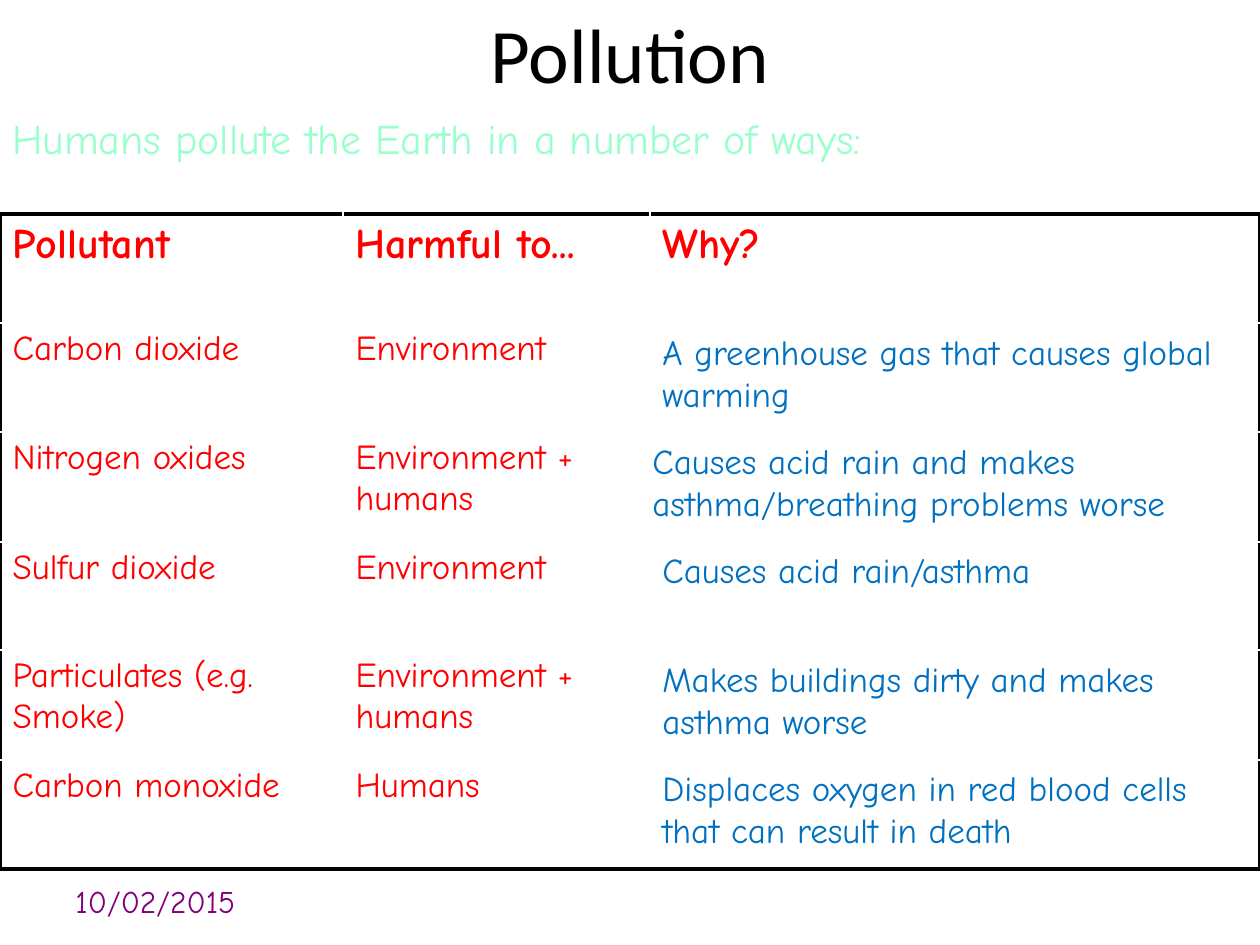
from lxml import etree
from pptx import Presentation
from pptx.dml.color import RGBColor
from pptx.enum.text import MSO_ANCHOR, MSO_AUTO_SIZE, PP_ALIGN
from pptx.oxml.ns import qn
from pptx.util import Emu, Pt

MIDDLE, TOP = MSO_ANCHOR.MIDDLE, MSO_ANCHOR.TOP
LEFT, CENTER = PP_ALIGN.LEFT, PP_ALIGN.CENTER
GROW, FIXED = MSO_AUTO_SIZE.SHAPE_TO_FIT_TEXT, MSO_AUTO_SIZE.NONE
SCALE = 914400 / 126
COMIC = "Comic Neue"

TITLE = {"name": "Calibri", "size": Pt(44)}
INTRO = {"name": COMIC, "size": Pt(24)}
HEAD = {"name": COMIC, "size": Pt(24), "bold": True}
BODY = {"name": COMIC, "size": Pt(20), "bold": False}
DATE = {"name": COMIC, "size": Pt(18)}

COLS = [343, 307, 610]
ROWS = [109, 109, 110, 108, 110, 109]
CELLS = [
    ["Pollutant", "Harmful to...", "Why?"],
    ["Carbon dioxide", "Environment", ""],
    ["Nitrogen oxides", "Environment + humans", ""],
    ["Sulfur dioxide", "Environment", ""],
    ["Particulates (e.g. Smoke)", "Environment + humans", ""],
    ["Carbon monoxide", "Humans", ""],
]
REASONS = [
    (650, 324, 97, "A greenhouse gas that causes global warming"),
    (640, 433, 97, "Causes acid rain and makes asthma/breathing problems worse"),
    (650, 542, 54, "Causes acid rain/asthma"),
    (650, 651, 97, "Makes buildings dirty and makes asthma worse"),
    (650, 760, 97, "Displaces oxygen in red blood cells that can result in death"),
]


def px(n):
    return Emu(round(n * SCALE))


def color(code):
    return RGBColor.from_string(code)


def write(frame, text, style, ink, align=LEFT):
    para = frame.paragraphs[0]
    para.alignment = align
    run = para.add_run()
    run.text = text
    for key, value in style.items():
        setattr(run.font, key, value)
    run.font.color.rgb = color(ink)


def add_text(slide, box, text, style, ink, align=LEFT, anchor=TOP, fit=GROW):
    frame = slide.shapes.add_textbox(*map(px, box)).text_frame
    traits = {"word_wrap": True, "auto_size": fit, "vertical_anchor": anchor}
    for key, value in traits.items():
        setattr(frame, key, value)
    write(frame, text, style, ink, align)


def add_edge(cell, side, outer):
    width, ink = (Pt(2.25), "000000") if outer else (Pt(1), "FFFFFF")
    props = cell._tc.get_or_add_tcPr()
    line = etree.SubElement(props, qn("a:ln" + side), w=str(width))
    fill = etree.SubElement(line, qn("a:solidFill"))
    etree.SubElement(fill, qn("a:srgbClr"), val=ink)


def add_grid(slide):
    box = map(px, (0, 214, sum(COLS), sum(ROWS)))
    table = slide.shapes.add_table(len(ROWS), len(COLS), *box).table
    table.first_row = table.horz_banding = False
    for col, width in zip(table.columns, COLS):
        col.width = px(width)
    for row, height in zip(table.rows, ROWS):
        row.height = px(height)
    for r, texts in enumerate(CELLS):
        for c, text in enumerate(texts):
            cell = table.cell(r, c)
            edges = {
                "L": c == 0,
                "R": c == len(COLS) - 1,
                "T": r == 0,
                "B": r == len(ROWS) - 1,
            }
            for side, outer in edges.items():
                add_edge(cell, side, outer)
            cell.fill.background()
            if text:
                write(cell.text_frame, text, BODY if r else HEAD, "FF0000")


def main():
    deck = Presentation()
    deck.slide_width, deck.slide_height = px(1260), px(945)
    slide = deck.slides.add_slide(deck.slide_layouts[6])
    add_text(slide, (63, 876, 294, 50), "10/02/2015", DATE, "800080",
             anchor=MIDDLE, fit=FIXED)
    add_text(slide, (0, 0, 1260, 105), "Pollution", TITLE, "000000",
             CENTER, MIDDLE, FIXED)
    add_text(slide, (0, 106, 1260, 63),
             "Humans pollute the Earth in a number of ways:", INTRO, "99FFCC")
    add_grid(slide)
    for left, top, height, text in REASONS:
        add_text(slide, (left, top, 610, height), text, BODY, "0070C0")
    deck.save("out.pptx")


if __name__ == "__main__":
    main()
